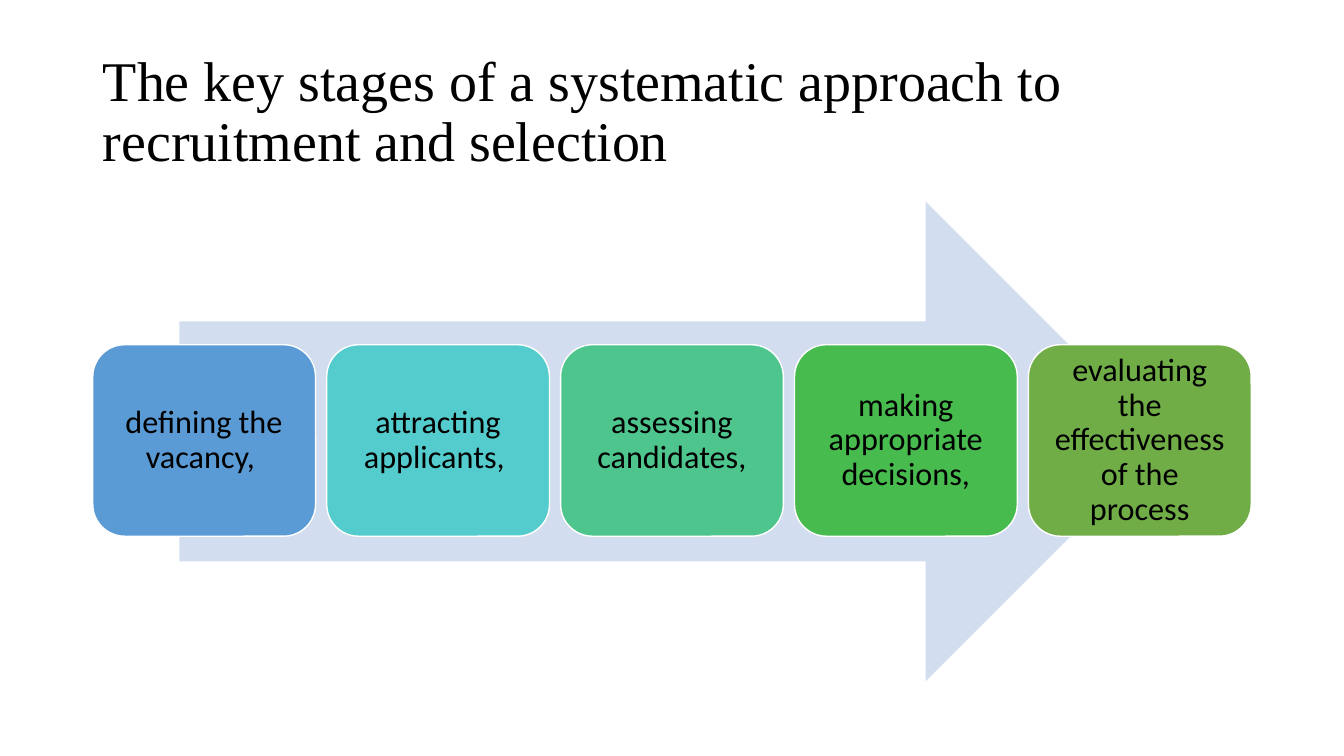
"""Build a slide showing the recruitment and selection stages along an arrow."""
from pptx import Presentation
from pptx.dml.color import RGBColor
from pptx.enum import shapes, text
from pptx.util import Inches, Pt

TITLE = "The key stages of a systematic approach to recruitment and selection"
STAGES = [
    ("defining the vacancy, ", RGBColor(0x5B, 0x9B, 0xD5)),
    ("attracting applicants, ", RGBColor(0x54, 0xCC, 0xCD)),
    ("assessing candidates,", RGBColor(0x4D, 0xC5, 0x8D)),
    ("making appropriate decisions,", RGBColor(0x48, 0xBB, 0x4F)),
    ("evaluating the effectiveness of the process", RGBColor(0x70, 0xAD, 0x47)),
]
ARROW_COLOR = RGBColor(0xD2, 0xDE, 0xEF)
WHITE = RGBColor(0xFF, 0xFF, 0xFF)
BLACK = RGBColor(0x00, 0x00, 0x00)

MARGIN = 0.92
STAGE_TOP, STAGE_WIDTH, STAGE_HEIGHT = 3.42, 2.21, 1.9
STAGE_STEP = 2.32


def add_filled_shape(slide, kind, left, top, width, height, color):
    shape = slide.shapes.add_shape(
        kind, Inches(left), Inches(top), Inches(width), Inches(height))
    shape.shadow.inherit = False
    shape.fill.solid()
    shape.fill.fore_color.rgb = color
    return shape


def write_text(shape, wording, font_name, size, alignment):
    frame = shape.text_frame
    frame.text = wording
    frame.word_wrap = True
    frame.auto_size = text.MSO_AUTO_SIZE.NONE
    frame.vertical_anchor = text.MSO_ANCHOR.MIDDLE
    paragraph = frame.paragraphs[0]
    paragraph.alignment = alignment
    paragraph.line_spacing = 0.9
    font = paragraph.runs[0].font
    font.name = font_name
    font.size = Pt(size)
    font.color.rgb = BLACK


def add_stage(slide, index, wording, color):
    stage = add_filled_shape(
        slide, shapes.MSO_SHAPE.ROUNDED_RECTANGLE, MARGIN + index * STAGE_STEP,
        STAGE_TOP, STAGE_WIDTH, STAGE_HEIGHT, color)
    stage.line.color.rgb = WHITE
    stage.line.width = Pt(1)
    write_text(stage, wording, "Calibri", 23, text.PP_ALIGN.CENTER)
    frame = stage.text_frame
    frame.margin_left = frame.margin_right = Inches(0.1)
    frame.margin_top = frame.margin_bottom = Inches(0.1)


def main():
    presentation = Presentation()
    presentation.slide_width = Inches(13.33)
    presentation.slide_height = Inches(7.5)
    slide = presentation.slides.add_slide(presentation.slide_layouts[5])

    title = slide.shapes.title
    title.left, title.top = Inches(MARGIN), Inches(0.4)
    title.width, title.height = Inches(11.5), Inches(1.45)
    write_text(title, TITLE, "Times New Roman", 40, text.PP_ALIGN.LEFT)

    arrow = add_filled_shape(
        slide, shapes.MSO_SHAPE.RIGHT_ARROW, 1.78, 2, 9.78, 4.76, ARROW_COLOR)
    arrow.line.fill.background()

    for index, (wording, color) in enumerate(STAGES):
        add_stage(slide, index, wording, color)

    presentation.save("out.pptx")


if __name__ == "__main__":
    main()
